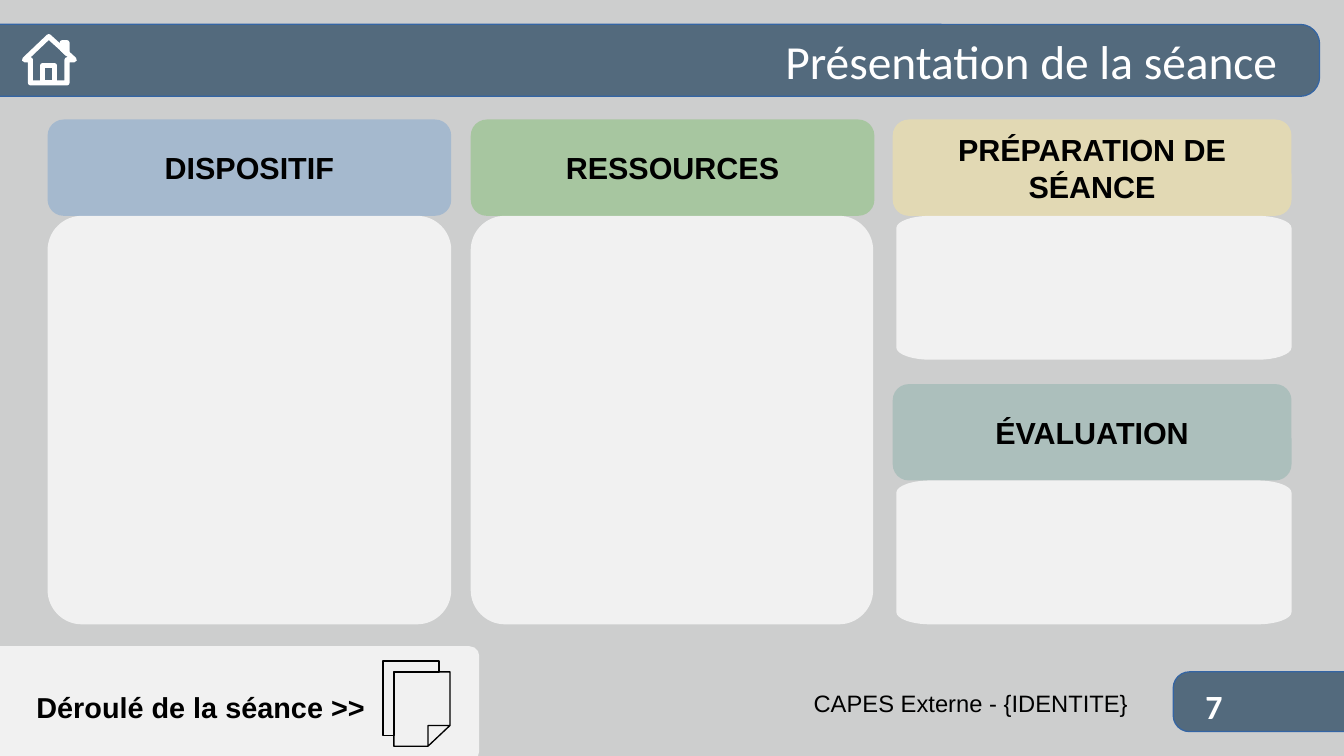
from lxml import etree
from pptx import Presentation
from pptx.dml.color import RGBColor
from pptx.enum.shapes import MSO_SHAPE
from pptx.enum.text import MSO_ANCHOR, PP_ALIGN
from pptx.oxml.ns import qn
from pptx.util import Inches, Pt

ROUNDED = MSO_SHAPE.ROUNDED_RECTANGLE
TOP, MIDDLE = MSO_ANCHOR.TOP, MSO_ANCHOR.MIDDLE
LEFT, CENTER, RIGHT = PP_ALIGN.LEFT, PP_ALIGN.CENTER, PP_ALIGN.RIGHT

# Content
BACKGROUND, BAND, BAND_EDGE = "CDCECE", "355269", "3465A4"
WHITE, BLACK = "FFFFFF", "000000"

# Bands: left, top, width, height, corner, fill, opacity, edge
BANDS = [
    (-0.2, 0.2, 11.02, 0.59, 0.27, BAND, 80, BAND_EDGE),
    (9.62, 5.51, 4.94, 0.49, 0.27, BAND, 80, BAND_EDGE),
    (-0.2, 5.3, 4.13, 0.94, 0.084, WHITE, 72, None),
]

# Cards: heading, fill, left, top, width, panel inset, panel width, panel height, corner height
HEADING_HEIGHT, CORNER_WIDTH = 0.79, 0.28
CARDS = [
    ("DISPOSITIF", "729FCF", 0.39, 0.98, 3.31, 0, 3.31, 3.35, 0.28),
    ("RESSOURCES", "77BC65", 3.86, 0.98, 3.31, 0, 3.3, 3.35, 0.28),
    ("PRÉPARATION DE SÉANCE", "FFE994", 7.32, 0.98, 3.27, 0.03, 3.24, 1.18, 0.1),
    ("ÉVALUATION", "81ACA6", 7.32, 3.15, 3.27, 0.03, 3.24, 1.18, 0.1),
]

# Texts: text, box, font, size, bold, colour, alignment, anchor, margins
NO_MARGINS, MARGINS = (0, 0), (0.1, 0.05)
TEXTS = [
    ("Présentation de la séance", (2.95, 0.2, 7.52, 0.59),
     "Calibri", 28, False, WHITE, RIGHT, MIDDLE, NO_MARGINS),
    ("Déroulé de la séance >>", (0.2, 5.61, 3.54, 0.59),
     "Arial", 17, True, BLACK, LEFT, TOP, MARGINS),
    ("CAPES Externe - {IDENTITE}", (2.64, 5.65, 6.61, 0.43),
     "Arial", 14, False, BLACK, RIGHT, TOP, NO_MARGINS),
    ("7", (9.62, 5.62, 0.67, 0.43),
     "Calibri", 20, True, WHITE, CENTER, TOP, NO_MARGINS),
]

# Icons: outlines as (points, closed)
HOUSE = [
    ([(0.25, 0.68), (0.25, 0.49), (0.2, 0.49), (0.4, 0.3), (0.61, 0.49),
      (0.55, 0.49), (0.55, 0.68)], True),
    ([(0.45, 0.68), (0.45, 0.54), (0.35, 0.54), (0.35, 0.68)], True),
    ([(0.51, 0.4), (0.51, 0.35), (0.55, 0.35), (0.55, 0.44)], True),
]
PAGES = [
    ([(3.51, 6.12), (3.23, 6.12), (3.23, 5.51), (3.69, 5.51), (3.69, 5.95),
      (3.51, 6.12), (3.51, 5.95), (3.69, 5.95)], False),
    ([(3.6, 5.51), (3.6, 5.42), (3.14, 5.42), (3.14, 6.03), (3.23, 6.03),
      (3.23, 5.51)], True),
]
ICONS = [(HOUSE, WHITE, 3), (PAGES, BLACK, 0.79)]


# Helpers
def paint(fill, color, opacity=100):
    """Give a fill a solid colour."""
    fill.solid()
    fill.fore_color.rgb = RGBColor.from_string(color)
    if opacity < 100:
        solid = fill.fore_color._xFill
        alpha = etree.SubElement(solid.find(qn("a:srgbClr")), qn("a:alpha"))
        alpha.set("val", str(opacity * 1000))


def style(shape, fill=None, opacity=100, edge=None, weight=0):
    shape.shadow.inherit = False
    if fill:
        paint(shape.fill, fill, opacity)
    else:
        shape.fill.background()
    if edge:
        paint(shape.line.fill, edge)
        shape.line.width = Pt(weight)
    else:
        shape.line.fill.background()


def write(shape, text, font, size, bold, color, alignment, anchor, margins):
    frame = shape.text_frame
    frame.word_wrap = True
    frame.vertical_anchor = anchor
    frame.margin_left = frame.margin_right = Inches(margins[0])
    frame.margin_top = frame.margin_bottom = Inches(margins[1])
    paragraph = frame.paragraphs[0]
    paragraph.text = text
    paragraph.alignment = alignment
    paragraph.font.name, paragraph.font.size = font, Pt(size)
    paragraph.font.bold = bold
    paint(paragraph.font.fill, color)


def add_rounded(shapes, left, top, width, height, corner):
    shape = shapes.add_shape(ROUNDED, *map(Inches, (left, top, width, height)))
    shape.adjustments[0] = corner
    return shape


def add_outline(shapes, points, closed=True):
    points = [(Inches(x), Inches(y)) for x, y in points]
    builder = shapes.build_freeform(*points[0])
    builder.add_line_segments(points[1:], close=closed)
    return builder.convert_to_shape()


def add_panel(shapes, left, top, width, height, corner_width, corner_height):
    """Draw a rectangle whose four elliptical corners are one curve each."""
    right, bottom = left + width, top + height
    points = []
    for x, y, dx, dy, starts_on_side in [
        (left, top, 1, 1, False), (left, bottom, 1, -1, True),
        (right, bottom, -1, -1, False), (right, top, -1, 1, True),
    ]:
        # Two ends of the curve, each with its control point
        along_x, along_y = dx * corner_width, dy * corner_height
        corner = [(x + along_x, y), (x + along_x * 0.45, y),
                  (x, y + along_y * 0.45), (x, y + along_y)]
        points += corner[::-1] if starts_on_side else corner
    shape = add_outline(shapes, points)

    # Each corner's last three points become one curve
    lines = list(shape.element.iter(qn("a:lnTo")))
    for start in range(0, len(points), 4):
        curve = etree.Element(qn("a:cubicBezTo"))
        lines[start].addprevious(curve)
        for line in lines[start:start + 3]:
            curve.append(line[0])
            line.getparent().remove(line)
    return shape


def build():
    presentation = Presentation()
    presentation.slide_width, presentation.slide_height = Inches(11.02), Inches(6.2)
    slide = presentation.slides.add_slide(presentation.slide_layouts[6])
    shapes = slide.shapes
    paint(slide.background.fill, BACKGROUND)

    # Bands
    for *box, corner, fill, opacity, edge in BANDS:
        style(add_rounded(shapes, *box, corner), fill, opacity, edge)

    # Cards: heading above an empty panel
    for heading, fill, left, top, width, inset, panel_width, panel_height, corner in CARDS:
        shape = add_rounded(shapes, left, top, width, HEADING_HEIGHT, 0.167)
        style(shape, fill, 43)
        write(shape, heading, "Arial", 18, True, BLACK, CENTER, MIDDLE, MARGINS)
        panel = add_panel(shapes, left + inset, top + HEADING_HEIGHT, panel_width,
                          panel_height, CORNER_WIDTH, corner)
        style(panel, WHITE, 72)

    # Icons
    for outlines, color, weight in ICONS:
        group = shapes.add_group_shape()
        for points, closed in outlines:
            style(add_outline(group.shapes, points, closed), edge=color, weight=weight)

    # Title, link, footer and page number
    for text, box, *text_style in TEXTS:
        write(shapes.add_textbox(*map(Inches, box)), text, *text_style)

    presentation.save("out.pptx")


if __name__ == "__main__":
    build()
